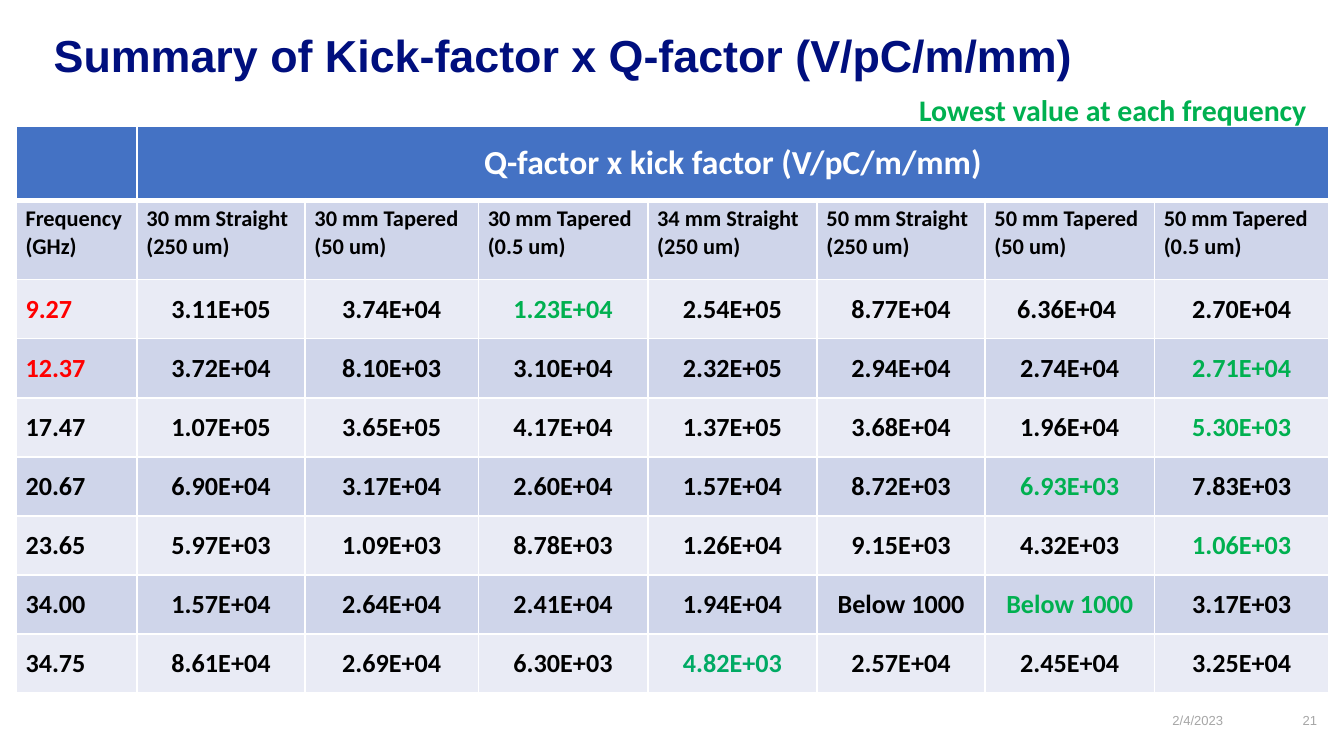
from lxml.etree import SubElement
from pptx import Presentation
from pptx.dml.color import RGBColor
from pptx.enum.text import MSO_ANCHOR, PP_ALIGN
from pptx.oxml.ns import qn
from pptx.util import Inches, Pt

WHITE, BLACK, RED, GREEN = "FFFFFF", "000000", "FF0000", "00B050"
NAVY, GRAY, BLUE = "000F7E", "A6A6A6", "4472C4"
BANDS = ["CFD5EA", "E9EBF5"]

SLIDE_WIDTH = 10
SLIDE_HEIGHT = SLIDE_WIDTH * 9 / 16
COLUMN_WIDTHS = [0.9, 1.25, 1.29, 1.26, 1.26, 1.25, 1.26, 1.3]
ROW_HEIGHTS = [0.55, 0.59] + [0.44] * 7
HEADINGS = [
    "Frequency (GHz)",
    "30 mm Straight\n(250 um)",
    "30 mm Tapered\n(50 um)",
    "30 mm Tapered\n(0.5 um)",
    "34 mm Straight\n(250 um)",
    "50 mm Straight\n(250 um)",
    "50 mm Tapered\n(50 um)",
    "50 mm Tapered\n(0.5 um)",
]
READINGS = [
    ["9.27", "3.11E+05", "3.74E+04", "1.23E+04", "2.54E+05", "8.77E+04", "6.36E+04 ", "2.70E+04"],
    ["12.37", "3.72E+04", "8.10E+03", "3.10E+04", "2.32E+05", "2.94E+04", "2.74E+04", "2.71E+04"],
    ["17.47", "1.07E+05", "3.65E+05", "4.17E+04", "1.37E+05", "3.68E+04", "1.96E+04", "5.30E+03"],
    ["20.67", "6.90E+04", "3.17E+04", "2.60E+04", "1.57E+04", "8.72E+03", "6.93E+03", "7.83E+03"],
    ["23.65", "5.97E+03", "1.09E+03", "8.78E+03", "1.26E+04", "9.15E+03", "4.32E+03", "1.06E+03"],
    ["34.00", "1.57E+04", "2.64E+04", "2.41E+04", "1.94E+04", "Below 1000", "Below 1000", "3.17E+03"],
    ["34.75", "8.61E+04", "2.69E+04", "6.30E+03", "4.82E+03", "2.57E+04", "2.45E+04", "3.25E+04"],
]
HIGHLIGHTS = {
    (0, 0): RED, (1, 0): RED,
    (0, 3): GREEN, (1, 7): GREEN, (2, 7): GREEN, (3, 6): GREEN,
    (4, 7): GREEN, (5, 6): GREEN, (6, 4): "00AA64",
}


def color(value):
    """Turn a hex string into a colour."""
    return RGBColor.from_string(value)


def write(frame, text, size, ink=BLACK, font="Calibri", bold=True, align=PP_ALIGN.LEFT):
    """Fill a text frame with one paragraph for each line of text."""
    frame.word_wrap = True
    for index, line in enumerate(text.split("\n")):
        paragraph = frame.add_paragraph() if index else frame.paragraphs[0]
        paragraph.alignment = align
        run = paragraph.add_run()
        run.text = line
        run.font.size = Pt(size)
        run.font.name = font
        run.font.bold = bold
        run.font.color.rgb = color(ink)


def add_text(slide, box, text, size, inset=(0, 0), **style):
    """Place a text box with the given horizontal and vertical insets."""
    frame = slide.shapes.add_textbox(*map(Inches, box)).text_frame
    frame.margin_left = frame.margin_right = Inches(inset[0])
    frame.margin_top = frame.margin_bottom = Inches(inset[1])
    write(frame, text, size, **style)


def style_cell(cell, fill, bottom=1):
    """Give a cell its white borders, fill and margins."""
    properties = cell._tc.get_or_add_tcPr()
    for side, width in zip(("lnL", "lnR", "lnT", "lnB"), (1, 1, 1, bottom)):
        line = SubElement(properties, qn(f"a:{side}"), w=str(Pt(width)))
        solid = SubElement(line, qn("a:solidFill"))
        SubElement(solid, qn("a:srgbClr"), val=WHITE)
    cell.fill.solid()
    cell.fill.fore_color.rgb = color(fill)
    cell.margin_left = cell.margin_right = Inches(0.07)
    cell.margin_top = cell.margin_bottom = Inches(0.04)


def add_factor_table(slide, left, top):
    """Build the table of kick factor times Q-factor."""
    table = slide.shapes.add_table(
        len(ROW_HEIGHTS), len(COLUMN_WIDTHS), Inches(left), Inches(top),
        Inches(sum(COLUMN_WIDTHS)), Inches(sum(ROW_HEIGHTS)),
    ).table
    for column, width in zip(table.columns, COLUMN_WIDTHS):
        column.width = Inches(width)
    for row, height in zip(table.rows, ROW_HEIGHTS):
        row.height = Inches(height)

    for cell in table.rows[0].cells:
        style_cell(cell, BLUE, bottom=3)
    banner = table.cell(0, 1)
    banner.merge(table.cell(0, len(COLUMN_WIDTHS) - 1))
    banner.vertical_anchor = MSO_ANCHOR.MIDDLE
    write(banner.text_frame, "Q-factor x kick factor (V/pC/m/mm)", 18,
          ink=WHITE, align=PP_ALIGN.CENTER)

    for cell, heading in zip(table.rows[1].cells, HEADINGS):
        style_cell(cell, BANDS[0])
        write(cell.text_frame, heading, 12)

    for row, readings in enumerate(READINGS):
        for column, reading in enumerate(readings):
            cell = table.cell(row + 2, column)
            style_cell(cell, BANDS[(row + 1) % 2])
            cell.vertical_anchor = MSO_ANCHOR.MIDDLE
            write(cell.text_frame, reading, 14,
                  ink=HIGHLIGHTS.get((row, column), BLACK),
                  align=PP_ALIGN.CENTER if column else PP_ALIGN.LEFT)


def add_heading(slide, left, top):
    """Place the title and the key to the green values."""
    add_text(slide, (left + 6.34, top + 0.42, 3.14, 0.37),
             "Lowest value at each frequency", 16, inset=(0.1, 0.05), ink=GREEN)
    add_text(slide, (left, top, 9, 0.73),
             "Summary of Kick-factor x Q-factor (V/pC/m/mm)", 24, ink=NAVY, font="Arial")


def add_footer(slide, left, top):
    """Place the date and the page number."""
    style = dict(ink=GRAY, font="Arial", bold=False, align=PP_ALIGN.RIGHT)
    add_text(slide, (left, top, 0.67, 0.16), "2/4/2023", 7, **style)
    add_text(slide, (left + 1.13, top, 0.24, 0.22), "21", 7, **style)


def main():
    """Build and save the slide."""
    deck = Presentation()
    deck.slide_width, deck.slide_height = Inches(SLIDE_WIDTH), Inches(SLIDE_HEIGHT)
    slide = deck.slides.add_slide(deck.slide_layouts[6])
    add_footer(slide, 8.43, 5.3)
    add_factor_table(slide, 0.12, 0.94)
    add_heading(slide, 0.4, 0.21)
    deck.save("out.pptx")


if __name__ == "__main__":
    main()
